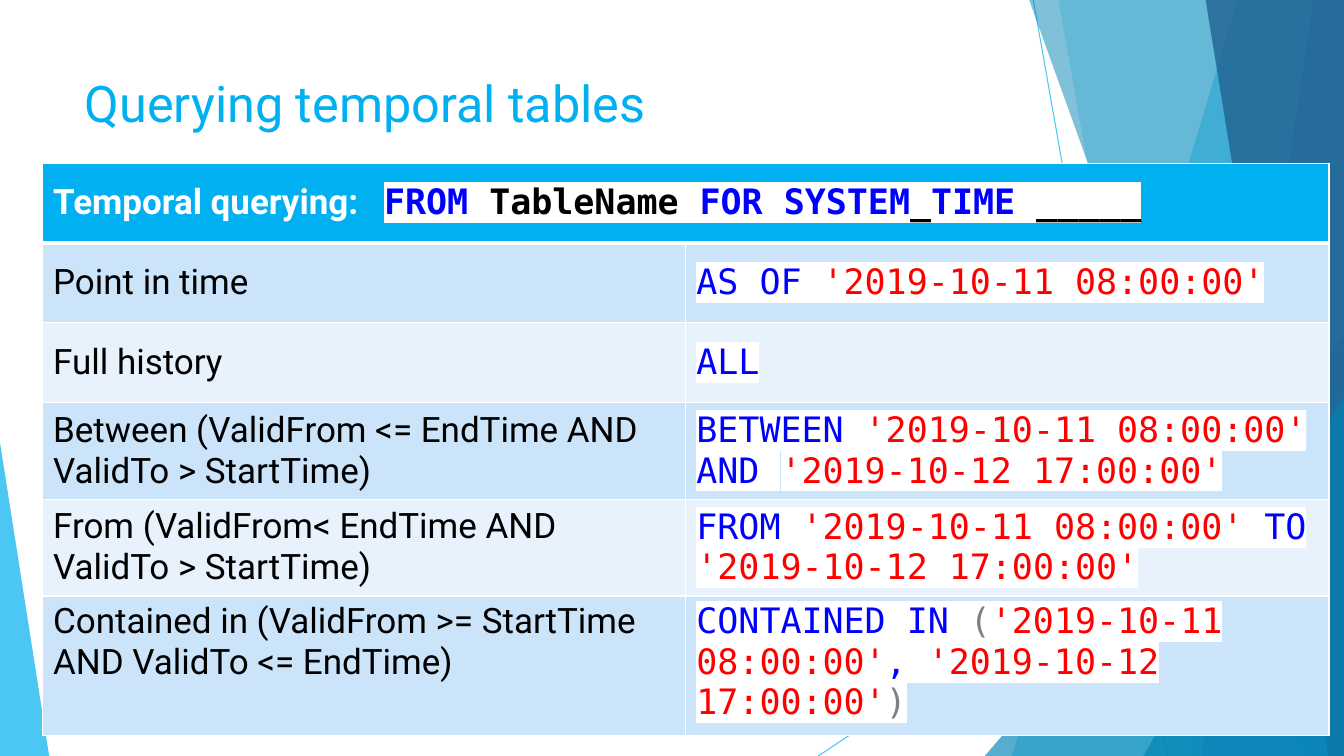
from lxml import etree
from pptx import Presentation
from pptx import util as u
from pptx.dml import color
from pptx.enum import shapes, text
from pptx.oxml import ns

HUES = {
    "sky": "00B0F0", "sea": "0084B4", "blue": "2E83C3", "navy": "226292",
    "white": "FFFFFF", "ink": "000000", "key": "0000FF", "date": "FF0000",
    "sign": "808080", "dark": "CCE4F9", "light": "E7F2FC",
}
SANS, MONO = "Roboto", "DejaVu Sans Mono"
WIDE, HIGH = 33.87, 19.05
START, END = "'2019-10-11 08:00:00'", "'2019-10-12 17:00:00'"

HEAD = [("FROM", "key"), (" TableName ", "ink"), ("FOR SYSTEM", "key"),
        ("_", "ink"), ("TIME", "key"), (" _____", "ink")]
ROWS = [
    ("Point in time", [("AS OF ", "key"), (START, "date")]),
    ("Full history", [("ALL", "key")]),
    ("Between (ValidFrom <= EndTime AND ValidTo > StartTime)",
     [("BETWEEN ", "key"), (START, "date"), (" AND ", "key"), (END, "date")]),
    ("From (ValidFrom< EndTime AND ValidTo > StartTime)",
     [("FROM ", "key"), (START, "date"), (" TO ", "key"), (END, "date")]),
    ("Contained in (ValidFrom >= StartTime AND ValidTo <= EndTime)",
     [("CONTAINED IN ", "key"), ("(", "sign"), (START, "date"), (", ", "key"),
      (END, "date"), (")", "sign")]),
]
TALL = [2.01, 2.01, 2.01, 2.44, 2.44, 3.51]


def rgb(hue):
    """Return the named colour."""
    return color.RGBColor.from_string(HUES[hue])


def tag(root, name, **attrs):
    """Append a drawing element to root and return it."""
    return etree.SubElement(root, ns.qn("a:" + name), attrs)


def fade(shape, alpha):
    """Set the opacity of a shape's colours in percent."""
    for node in shape.element.iter(ns.qn("a:srgbClr")):
        tag(node, "alpha", val=str(alpha * 1000))


def paint(shape, hue, alpha):
    """Fill a shape without outline or shadow."""
    shape.shadow.inherit = False
    shape.fill.solid()
    shape.fill.fore_color.rgb = rgb(hue)
    shape.line.fill.background()
    fade(shape, alpha)


def ray(slide, x1, y1, x2, y2):
    """Draw a thin pale line."""
    line = slide.shapes.add_connector(
        shapes.MSO_CONNECTOR.STRAIGHT, u.Cm(x1), u.Cm(y1), u.Cm(x2), u.Cm(y2))
    line.line.color.rgb = rgb("sky")
    line.line.width = u.Pt(0.75)
    fade(line, 70)
    tag(line.element.spPr, "effectLst")


def pane(slide, top, base, hue, alpha):
    """Draw a facet from its slanted left edge to the right slide edge."""
    form = slide.shapes.build_freeform(u.Cm(top), u.Cm(-0.02))
    form.add_line_segments([
        (u.Cm(WIDE), u.Cm(-0.02)), (u.Cm(WIDE), u.Cm(HIGH)),
        (u.Cm(base), u.Cm(HIGH))], close=True)
    paint(form.convert_to_shape(), hue, alpha)


def wedge(slide, left, top, width, tip, hue, alpha):
    """Draw a right triangle standing on the bottom slide edge."""
    shape = slide.shapes.add_shape(
        shapes.MSO_SHAPE.ISOSCELES_TRIANGLE, u.Cm(left), u.Cm(top),
        u.Cm(width), u.Cm(HIGH - top))
    shape.adjustments[0] = tip
    paint(shape, hue, alpha)


def decor(slide):
    """Draw the facets on both sides of the slide."""
    ray(slide, 26.04, 0, 29.41, HIGH)
    ray(slide, WIDE, 10.24, 20.62, HIGH)
    pane(slide, 31.19, 25.5, "sky", 36)
    pane(slide, 26.67, 30.05, "sky", 20)
    wedge(slide, 24.82, 8.46, 9.05, 1, "sea", 66)
    pane(slide, 25.93, 32.79, "sea", 50)
    pane(slide, 33.1, 30.28, "blue", 70)
    pane(slide, 30.38, 33.48, "navy", 80)
    wedge(slide, 28.82, 9.98, 5.05, 1, "sea", 66)
    wedge(slide, 0, 11.15, 1.24, 0, "sky", 70)


def write(para, words, size, font, hue, bold=False, mark=False):
    """Add one formatted run, highlighted in white if marked."""
    run = para.add_run()
    run.text = words
    run.font.size, run.font.name, run.font.bold = u.Pt(size), font, bold
    run.font.color.rgb = rgb(hue)
    if mark:
        props = run._r.get_or_add_rPr()
        glow = etree.Element(ns.qn("a:highlight"))
        tag(glow, "srgbClr", val=HUES["white"])
        props.find(ns.qn("a:solidFill")).addnext(glow)


def title(slide, left, top, width, height):
    """Place the slide title above the facets."""
    shape = slide.shapes.title
    shape.left, shape.top = u.Cm(left), u.Cm(top)
    shape.width, shape.height = u.Cm(width), u.Cm(height)
    frame = shape.text_frame
    frame.vertical_anchor = text.MSO_ANCHOR.TOP
    frame.auto_size = text.MSO_AUTO_SIZE.NONE
    para = frame.paragraphs[0]
    para.alignment = text.PP_ALIGN.LEFT
    write(para, "Querying temporal tables", 36, SANS, "sky")
    slide.shapes.element.append(shape.element)


def edge(cell, row):
    """Draw white cell borders, thick below the heading."""
    props = cell._tc.get_or_add_tcPr()
    thick = {(0, "B"), (1, "T")}
    for spot, side in enumerate("LRTB"):
        width = 3 if (row, side) in thick else 1
        line = etree.Element(ns.qn("a:ln" + side), {"w": str(u.Pt(width))})
        tag(tag(line, "solidFill"), "srgbClr", val=HUES["white"])
        props.insert(spot, line)


def dress(cell, row):
    """Set the fill, margins, anchor and borders of a cell."""
    cell.fill.solid()
    hue = "sky" if row == 0 else "dark" if row % 2 else "light"
    cell.fill.fore_color.rgb = rgb(hue)
    cell.margin_left = cell.margin_right = u.Cm(0.27)
    cell.margin_top = cell.margin_bottom = u.Cm(0.13)
    last = row == len(ROWS)
    cell.vertical_anchor = text.MSO_ANCHOR.TOP if last else text.MSO_ANCHOR.MIDDLE
    edge(cell, row)


def code(para, parts, bold=False):
    """Add highlighted code runs."""
    for words, hue in parts:
        write(para, words, 25, MONO, hue, bold, True)


def grid(slide, left, top, width):
    """Build the table of temporal clauses."""
    table = slide.shapes.add_table(
        len(TALL), 2, u.Cm(left), u.Cm(top), u.Cm(width),
        u.Cm(sum(TALL))).table
    for col in table.columns:
        col.width = u.Cm(width / 2)
    for row, tall in enumerate(TALL):
        table.rows[row].height = u.Cm(tall)
        for cell in table.rows[row].cells:
            dress(cell, row)
    head = table.cell(0, 0)
    head.merge(table.cell(0, 1))
    para = head.text_frame.paragraphs[0]
    stops = tag(para._p.get_or_add_pPr(), "tabLst")
    tag(stops, "tab", pos=str(u.Cm(8.34)), algn="l")
    write(para, "Temporal querying:\t", 25, SANS, "white", True)
    code(para, HEAD, True)
    for row, (label, parts) in enumerate(ROWS, 1):
        para = table.cell(row, 0).text_frame.paragraphs[0]
        write(para, label, 25, SANS, "ink")
        code(table.cell(row, 1).text_frame.paragraphs[0], parts)


def main():
    """Build and save the slide."""
    deck = Presentation()
    deck.slide_width, deck.slide_height = u.Cm(WIDE), u.Cm(HIGH)
    slide = deck.slides.add_slide(deck.slide_layouts[5])
    decor(slide)
    title(slide, 1.88, 1.7, 23.88, 3.66)
    grid(slide, 1.07, 4.11, 32.42)
    deck.save("out.pptx")


if __name__ == "__main__":
    main()
